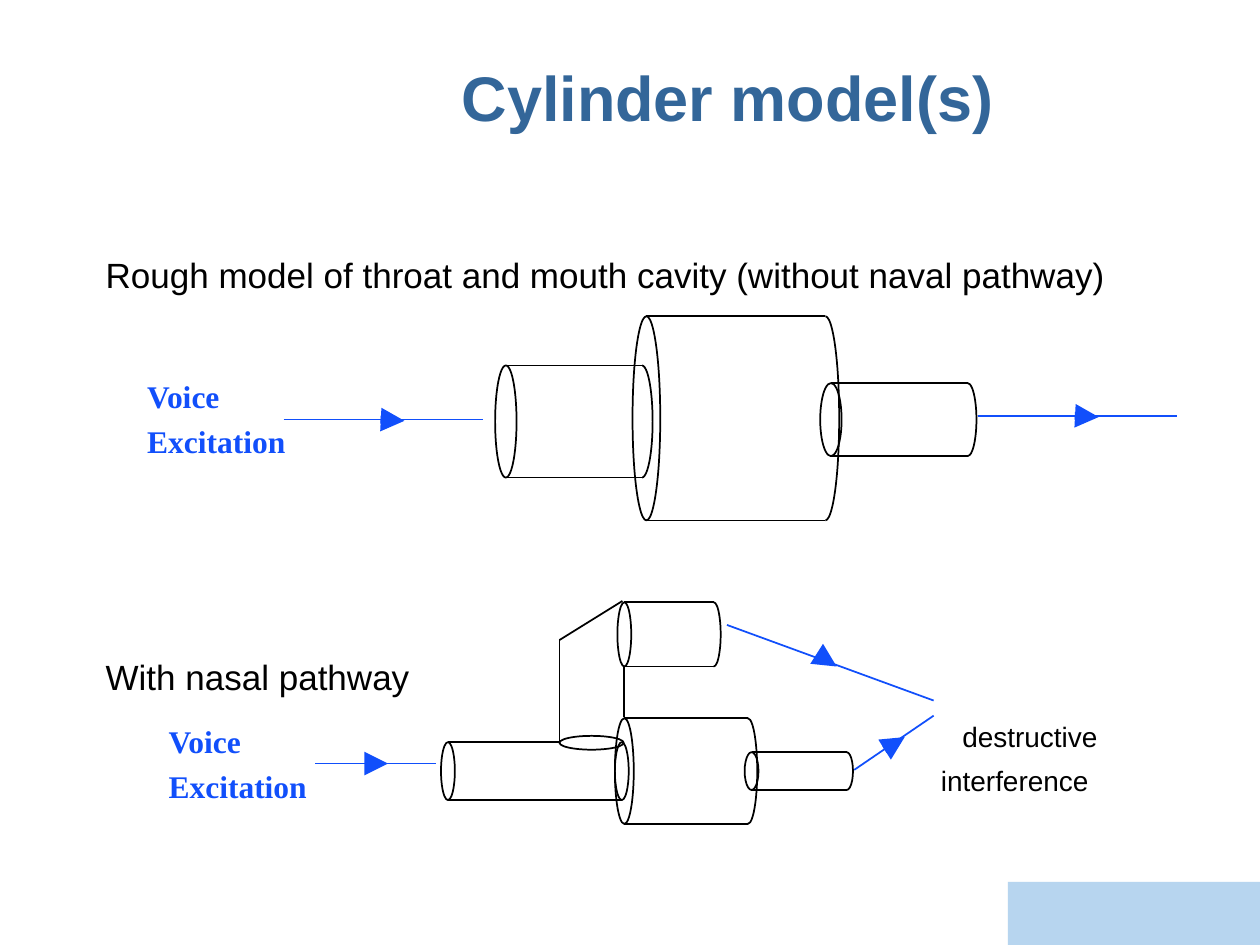
from dataclasses import dataclass
from typing import Optional

import pptx
import pptx.dml.color
import pptx.enum.shapes
import pptx.enum.text
import pptx.oxml
import pptx.oxml.ns
import pptx.util
from pptx.util import Inches

COLORS = {"title": "336699", "black": "000000", "blue": "114FFB",
          "white": "FFFFFF", "corner": "B7D5EF"}
SHAPES = pptx.enum.shapes.MSO_SHAPE
ANCHORS = pptx.enum.text.MSO_ANCHOR
COVER_OVERHANG = 0.04
COVER_MARGIN = 0.02


@dataclass
class Cylinder:
    left: float
    top: float
    shift: float
    height: float
    rim: float
    tip: float
    covered: bool = True
    top_end: Optional[float] = None


@dataclass
class Flow:
    start: tuple
    end: tuple
    arrow_start: tuple
    arrow_end: tuple


@dataclass
class Label:
    left: float
    top: float
    width: float
    height: float
    lines: tuple
    font: dict
    color: str = "black"
    paragraph: Optional[dict] = None
    gap: float = 6
    first_gap: float = 6
    first_indent: float = 0


BODY_FONT = {"name": "Arial", "size": pptx.util.Pt(20)}
NOTE_FONT = {"name": "Arial", "size": pptx.util.Pt(16)}
VOICE_FONT = {"name": "Times New Roman", "size": pptx.util.Pt(18), "bold": True}
TITLE_FONT = {"name": "Arial", "size": pptx.util.Pt(36), "bold": True}

UPPER_TRACT = [
    Cylinder(3.93, 2.9, 1.08, 0.89, 0.17, 0.17),
    Cylinder(5.02, 2.51, 1.42, 1.62, 0.22, 0.22),
    Cylinder(6.51, 3.04, 1.1, 0.58, 0.17, 0.14),
]
LOWER_TRACT = [
    Cylinder(3.5, 5.89, 1.38, 0.46, 0.11, 0.11, covered=False, top_end=4.44),
    Cylinder(4.88, 5.7, 0.98, 0.84, 0.15, 0.15),
    Cylinder(5.91, 5.97, 0.76, 0.3, 0.11, 0.1),
    Cylinder(4.9, 4.78, 0.71, 0.51, 0.11, 0.11),
]
NASAL_WALLS = [
    ((4.95, 5.69), (4.95, 5.29)),
    ((4.44, 5.89), (4.44, 5.08)),
    ((4.44, 5.08), (4.94, 4.77)),
]
FLOWS = [
    Flow((2.25, 3.33), (3.83, 3.33), (3.02, 3.33), (3.21, 3.34)),
    Flow((2.5, 6.06), (3.46, 6.06), (2.94, 6.06), (3.08, 6.06)),
    Flow((7.76, 3.3), (9.34, 3.3), (8.53, 3.3), (8.72, 3.31)),
    Flow((6.78, 6.11), (7.41, 5.68), (7.02, 5.95), (7.18, 5.85)),
    Flow((5.77, 4.96), (7.41, 5.56), (6.53, 5.22), (6.64, 5.29)),
]
LABELS = [
    Label(0.74, 1.96, 8.5, 0.5, ("Rough model of throat and mouth cavity (without naval pathway)",), BODY_FONT),
    Label(0.74, 5.15, 3, 0.5, ("With nasal pathway",), BODY_FONT),
    Label(7.37, 5.66, 1.8, 0.8, ("destructive", "interference"), NOTE_FONT, first_indent=0.17),
] + [
    Label(left, top, 1.33, 0.7, ("Voice", "Excitation"), VOICE_FONT, "blue",
          {"line_spacing": 0.75}, gap=9.5, first_gap=0)
    for left, top in ((1.07, 3.01), (1.24, 5.75))
]
CORNER = [(10, 7.19), (10, 7.5), (8.39, 7.5), (8.39, 7.34), (8.39, 7.3),
          (8.42, 7.25), (8.46, 7.22), (8.51, 7.2), (8.55, 7.19)]


def rgb(color: str) -> pptx.dml.color.RGBColor:
    return pptx.dml.color.RGBColor.from_string(COLORS[color])


def apply(target, values: dict) -> None:
    for name, value in values.items():
        setattr(target, name, value)


def fill_shape(shape, color: str) -> None:
    shape.shadow.inherit = False
    shape.fill.solid()
    shape.fill.fore_color.rgb = rgb(color)
    shape.line.fill.background()


def draw_line(slide, start: tuple, end: tuple, color: str = "black",
              width: float = 1, arrow: bool = False) -> None:
    connector = slide.shapes.add_connector(
        pptx.enum.shapes.MSO_CONNECTOR.STRAIGHT, *map(Inches, start + end))
    connector.line.color.rgb = rgb(color)
    connector.line.width = pptx.util.Pt(width)
    properties = connector.element.spPr
    if arrow:
        tail = pptx.oxml.parse_xml(f'<a:tailEnd {pptx.oxml.ns.nsdecls("a")} type="triangle"/>')
        connector.line._get_or_add_ln().append(tail)
    properties.append(pptx.oxml.parse_xml(f'<a:effectLst {pptx.oxml.ns.nsdecls("a")}/>'))


def draw_ellipse(slide, left: float, top: float, width: float, height: float) -> None:
    ellipse = slide.shapes.add_shape(SHAPES.OVAL, *map(Inches, (left, top, width, height)))
    ellipse.shadow.inherit = False
    ellipse.fill.background()
    ellipse.line.color.rgb = rgb("black")
    ellipse.line.width = pptx.util.Pt(1)


def draw_cylinder(slide, cylinder: Cylinder) -> None:
    right = cylinder.left + cylinder.shift
    start, end = cylinder.left + cylinder.rim / 2, right + cylinder.tip / 2
    bottom = cylinder.top + cylinder.height
    draw_ellipse(slide, right, cylinder.top, cylinder.tip, cylinder.height)
    if cylinder.covered:
        cover = slide.shapes.add_shape(
            SHAPES.RECTANGLE, Inches(right - COVER_OVERHANG), Inches(cylinder.top - COVER_MARGIN),
            Inches(cylinder.tip / 2 + COVER_OVERHANG), Inches(cylinder.height + 2 * COVER_MARGIN))
        fill_shape(cover, "white")
    draw_ellipse(slide, cylinder.left, cylinder.top, cylinder.rim, cylinder.height)
    draw_line(slide, (start, cylinder.top), (cylinder.top_end or end, cylinder.top))
    draw_line(slide, (start, bottom), (end, bottom))


def draw_flow(slide, flow: Flow) -> None:
    draw_line(slide, flow.start, flow.end, "blue")
    draw_line(slide, flow.arrow_start, flow.arrow_end, "blue", 4.5, arrow=True)


def draw_label(slide, label: Label) -> None:
    box = slide.shapes.add_textbox(*map(Inches, (label.left, label.top, label.width, label.height)))
    frame = box.text_frame
    apply(frame, {"text": "\n".join(label.lines), "word_wrap": True, "margin_right": 0})
    for index, paragraph in enumerate(frame.paragraphs):
        gap = label.gap if index else label.first_gap
        apply(paragraph, {"space_before": pptx.util.Pt(gap), **(label.paragraph or {})})
        apply(paragraph.runs[0].font, label.font)
        paragraph.runs[0].font.color.rgb = rgb(label.color)
    if label.first_indent:
        first_properties = frame.paragraphs[0]._p.get_or_add_pPr()
        first_properties.set("indent", str(Inches(label.first_indent)))


def draw_title(slide, text: str) -> None:
    title = slide.shapes.title
    apply(title, {"left": Inches(2.12), "top": Inches(0.18),
                  "width": Inches(7.31), "height": Inches(1.25)})
    apply(title.text_frame, {"text": text, "word_wrap": True, "vertical_anchor": ANCHORS.MIDDLE})
    paragraph = title.text_frame.paragraphs[0]
    apply(paragraph, {"alignment": pptx.enum.text.PP_ALIGN.CENTER, "line_spacing": 0.9})
    apply(paragraph.runs[0].font, TITLE_FONT)
    paragraph.runs[0].font.color.rgb = rgb("title")


def draw_corner(slide) -> None:
    builder = slide.shapes.build_freeform(*CORNER[0], scale=Inches(1))
    builder.add_line_segments(CORNER[1:], close=True)
    fill_shape(builder.convert_to_shape(), "corner")


def main() -> None:
    presentation = pptx.Presentation()
    apply(presentation, {"slide_width": Inches(10), "slide_height": Inches(7.5)})
    slide = presentation.slides.add_slide(presentation.slide_layouts[5])
    draw_corner(slide)
    draw_title(slide, "Cylinder model(s)")
    for cylinder in LOWER_TRACT + UPPER_TRACT:
        draw_cylinder(slide, cylinder)
    draw_ellipse(slide, 4.44, 5.84, 0.51, 0.11)
    for start, end in NASAL_WALLS:
        draw_line(slide, start, end)
    for flow in FLOWS:
        draw_flow(slide, flow)
    for label in LABELS:
        draw_label(slide, label)
    presentation.save("out.pptx")


if __name__ == "__main__":
    main()
